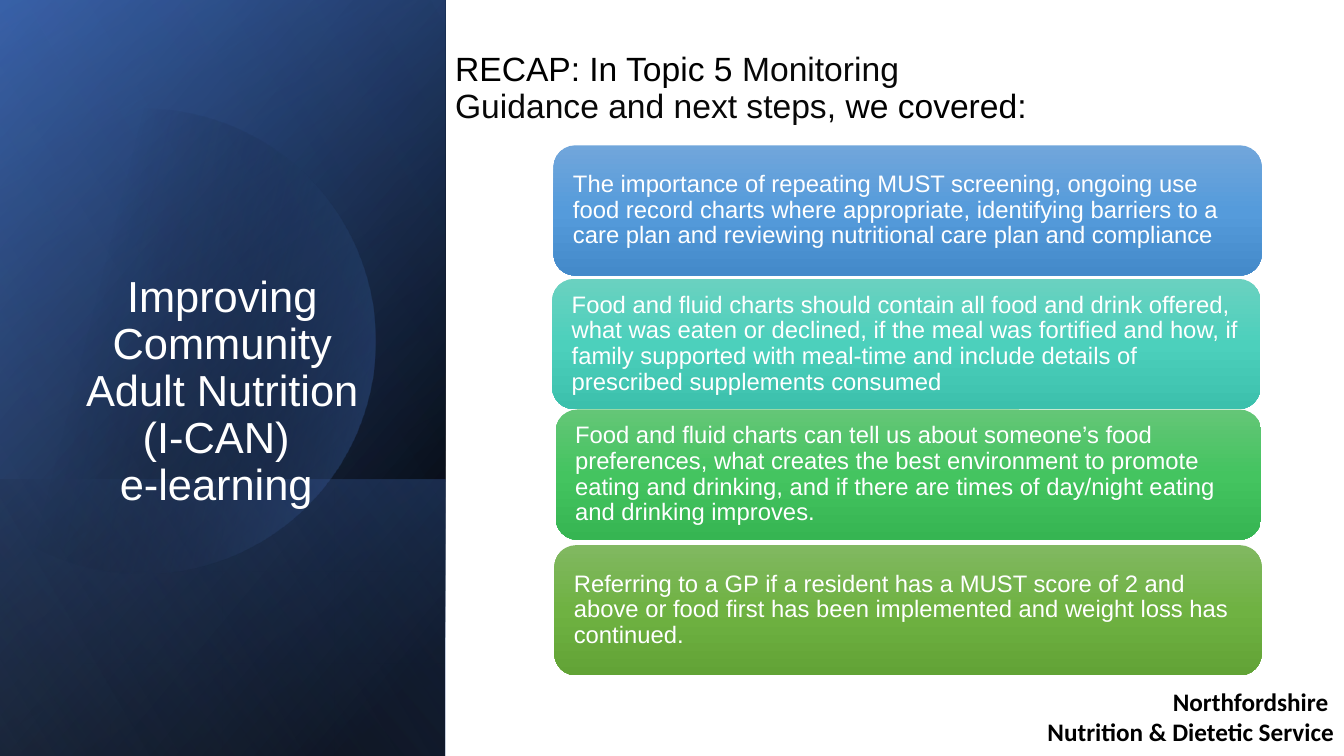
from math import cos, radians, sin

from lxml import etree
from pptx import Presentation
from pptx.dml.color import RGBColor
from pptx.enum.shapes import MSO_SHAPE
from pptx.enum.text import MSO_ANCHOR, PP_ALIGN
from pptx.oxml.ns import qn
from pptx.util import Inches, Pt

RECT, ROUND = MSO_SHAPE.RECTANGLE, MSO_SHAPE.ROUNDED_RECTANGLE
TOP, MIDDLE, BOTTOM = MSO_ANCHOR.TOP, MSO_ANCHOR.MIDDLE, MSO_ANCHOR.BOTTOM
LEFT, CENTER, RIGHT = PP_ALIGN.LEFT, PP_ALIGN.CENTER, PP_ALIGN.RIGHT

BLACK = RGBColor(0x00, 0x00, 0x00)
INK = RGBColor(0x08, 0x08, 0x08)
WHITE = RGBColor(0xFF, 0xFF, 0xFF)
NAVY = RGBColor(0x2F, 0x55, 0x97)
BLUE = RGBColor(0x44, 0x72, 0xC4)
PALE = RGBColor(0x8F, 0xAA, 0xDC)
SKIES = RGBColor(0x71, 0xA6, 0xDB), RGBColor(0x55, 0x9B, 0xDB), RGBColor(0x44, 0x8A, 0xCA)
TEALS = RGBColor(0x6A, 0xD1, 0xC0), RGBColor(0x4C, 0xD0, 0xBC), RGBColor(0x3C, 0xC0, 0xAC)
GREENS = RGBColor(0x64, 0xC6, 0x77), RGBColor(0x44, 0xC4, 0x60), RGBColor(0x36, 0xB5, 0x52)
LIMES = RGBColor(0x81, 0xB8, 0x61), RGBColor(0x6F, 0xB2, 0x42), RGBColor(0x62, 0xA3, 0x36)

COLS, ROWS = 160, 90
WIDE, HIGH = Inches(13.333), Inches(7.5)
CELL = HIGH / ROWS
SIDE = 53  # columns taken by the dark side panel

# top row, rows high, angle, stops as (position, colour, opacity)
PANELS = [
    (0, 90, 50, [(8, BLACK, 100), (100, NAVY, 100)]),
    (0, 90, 30, [(0, BLACK, 0), (99, BLUE, 46)]),
    (57.1, 32.9, 130, [(2, BLUE, 29), (100, BLACK, 30)]),
]
GLOW = [(29, BLACK, 0), (100, BLUE, 43)]
SHEEN = (0, 90, 120, [(0, BLACK, 0), (99, PALE, 11)])

# left, top, columns wide, colours, wording
CARDS = [
    (65.9, 17.3, 84.3, SKIES,
     "The importance of repeating MUST screening, ongoing use food record charts "
     "where appropriate, identifying barriers to a care plan and reviewing "
     "nutritional care plan and compliance"),
    (65.75, 33.2, 84.3, TEALS,
     "Food and fluid charts should contain all food and drink offered, what was "
     "eaten or declined, if the meal was fortified and how, if family supported "
     "with meal-time and include details of prescribed supplements consumed"),
    (66.15, 48.75, 84, GREENS,
     "Food and fluid charts can tell us about someone’s food preferences, what "
     "creates the best environment to promote eating and drinking, and if there "
     "are times of day/night eating and drinking improves."),
    (66, 64.9, 84.2, LIMES,
     "Referring to a GP if a resident has a MUST score of 2 and above or food first "
     "has been implemented and weight loss has continued."),
]


def grid(*cells):
    return [round(n * CELL) for n in cells]


def write(frame, paras, size=17, font="Arial", color=WHITE, bold=False,
          align=LEFT, anchor=MIDDLE, lines=0.9):
    """Fill a frame; each paragraph is a list of strings or (string, colour)."""
    frame.word_wrap = True
    frame.vertical_anchor = anchor
    for i, runs in enumerate(paras):
        para = frame.add_paragraph() if i else frame.paragraphs[0]
        para.alignment = align
        para.line_spacing = lines
        for item in runs:
            words, tint = item if isinstance(item, tuple) else (item, color)
            if words == "\n":
                para.add_line_break()
                continue
            run = para.add_run()
            run.text = words
            run.font.name, run.font.size = font, Pt(size)
            run.font.bold = bold
            run.font.color.rgb = tint


class Board:
    def __init__(self):
        self.deck = Presentation()
        self.deck.slide_width, self.deck.slide_height = WIDE, HIGH
        self.slide = self.deck.slides.add_slide(self.deck.slide_layouts[6])
        self.shapes = self.slide.shapes

    def shade(self, shape, stops, angle):
        """Give a shape a linear gradient, without line or shadow."""
        shape.shadow.inherit = False
        shape.line.fill.background()
        shape.fill.gradient()
        fill = shape.element.spPr.find(qn("a:gradFill"))
        for child in list(fill):
            fill.remove(child)
        fill.set("rotWithShape", "1")
        holder = etree.SubElement(fill, qn("a:gsLst"))
        for pos, color, alpha in stops:
            stop = etree.SubElement(holder, qn("a:gs"), pos=str(pos * 1000))
            tint = etree.SubElement(stop, qn("a:srgbClr"), val=str(color))
            if alpha < 100:
                etree.SubElement(tint, qn("a:alpha"), val=str(alpha * 1000))
        etree.SubElement(fill, qn("a:lin"), ang=str(angle * 60000), scaled="0")

    def panel(self, top, high, angle, stops):
        """Add a side panel, mirrored and turned so its gradient turns too."""
        left = (SIDE - high) / 2
        shape = self.shapes.add_shape(
            RECT, *grid(left, top + (high - SIDE) / 2, high, SIDE))
        shape.rotation = 90
        shape.element.spPr.find(qn("a:xfrm")).set("flipH", "1")
        self.shade(shape, stops, angle)

    def disc(self, x, y, radius, reach, stops, angle):
        """Add a disc cut off at its left, drawn from -reach to reach degrees."""
        arc = [grid(x + radius * cos(radians(d)), y + radius * sin(radians(d)))
               for d in range(-reach, reach + 1, 2)]
        pen = self.shapes.build_freeform(*arc[0])
        pen.add_line_segments(arc[1:], close=True)
        self.shade(pen.convert_to_shape(), stops, angle)

    def card(self, left, top, wide, colors, words):
        shape = self.shapes.add_shape(ROUND, *grid(left, top, wide, 15.5))
        self.shade(shape, [(i * 50, c, 100) for i, c in enumerate(colors)], 90)
        frame = shape.text_frame
        frame.margin_left = frame.margin_right = Inches(0.13)
        frame.margin_top = frame.margin_bottom = Inches(0.13)
        write(frame, [[words]])

    def text(self, box, paras, **style):
        write(self.shapes.add_textbox(*grid(*box)).text_frame, paras, **style)


def main():
    board = Board()
    for panel in PANELS:
        board.panel(*panel)
    board.disc(17.05, 40.6, 27.7, 128, GLOW, 14)
    board.panel(*SHEEN)
    board.text((6, 29.9, 40.9, 31.4),
               [["Improving Community Adult Nutrition (I-CAN) ", "\n", "e-learning "]],
               size=31, align=CENTER, anchor=BOTTOM)
    for card in CARDS:
        board.card(*card)
    board.text((53, 4.1, 72.4, 11.4),
               [["RECAP: In Topic 5 ", ("Monitoring Guidance and next steps, ", INK),
                 "we covered:"]],
               size=24, color=BLACK, anchor=BOTTOM)
    board.text((61.3, 81.1, 98.7, 8.5),
               [["Northfordshire "], ["Nutrition & Dietetic Service"]],
               size=18, font="Calibri", color=BLACK, bold=True,
               align=RIGHT, anchor=TOP, lines=1.0)
    board.deck.save("out.pptx")


if __name__ == "__main__":
    main()
